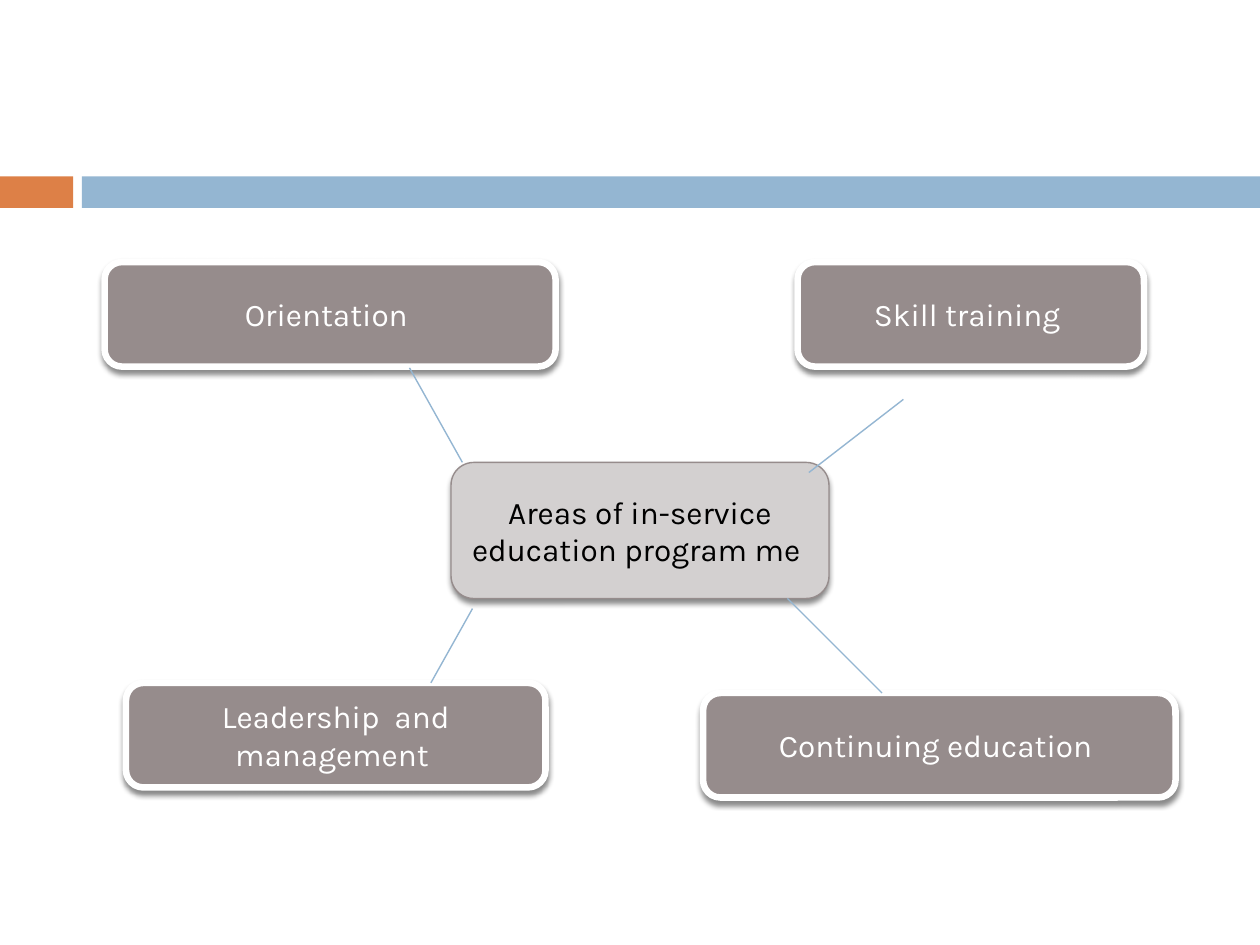
from lxml import etree
from pptx import Presentation
from pptx.dml.color import RGBColor
from pptx.enum.shapes import MSO_CONNECTOR, MSO_SHAPE
from pptx.enum.text import MSO_ANCHOR, PP_ALIGN
from pptx.oxml.ns import qn
from pptx.util import Inches, Pt

RECTANGLE = MSO_SHAPE.RECTANGLE
ROUNDED = MSO_SHAPE.ROUNDED_RECTANGLE
STRAIGHT = MSO_CONNECTOR.STRAIGHT
MIDDLE = MSO_ANCHOR.MIDDLE
CENTER = PP_ALIGN.CENTER

FONT = "Karla"
WHITE, BLACK = "FFFFFF", "000000"
ORANGE, BLUE = "DD8047", "94B6D2"
GRAY, LIGHT_GRAY = "968C8C", "D3D0D0"
THIN, THICK = 0.79, 3.75
AREA_HEIGHT = 0.83

AREAS = [
    ("Skill training ", 6.33, 2.08, 2.75),
    ("Orientation ", 0.83, 2.08, 3.58),
    ("Leadership  and management ", 1, 5.42, 3.33),
    ("Continuing education ", 5.58, 5.5, 3.75),
]
LINKS = [
    (6.42, 3.75, 7.17, 3.17),
    (3.67, 3.67, 3.25, 2.92),
    (3.42, 5.42, 3.75, 4.83),
    (6.25, 4.75, 7, 5.5),
]


def color(value):
    """Return the colour for a hex string."""
    return RGBColor.from_string(value)


def add_filled_shape(slide, kind, box, fill):
    """Add a flat shape with a solid fill and no outline."""
    shape = slide.shapes.add_shape(kind, *map(Inches, box))
    shape.shadow.inherit = False
    shape.fill.solid()
    shape.fill.fore_color.rgb = color(fill)
    shape.line.fill.background()
    return shape


def add_shadow(shape):
    """Give a shape a soft shadow that falls straight down."""
    effects = shape._element.spPr.find(qn("a:effectLst"))
    shadow = etree.SubElement(
        effects, qn("a:outerShdw"), blurRad=str(Pt(3)), dist=str(Pt(2.4)),
        dir="5400000", algn="ctr", rotWithShape="0")
    tint = etree.SubElement(shadow, qn("a:srgbClr"), val=BLACK)
    etree.SubElement(tint, qn("a:alpha"), val="45000")


def add_box(slide, text, box, fill, outline, width, text_color):
    """Add a rounded box with a shadow and a centred label."""
    shape = add_filled_shape(slide, ROUNDED, box, fill)
    shape.line.color.rgb = color(outline)
    shape.line.width = Pt(width)
    add_shadow(shape)
    frame = shape.text_frame
    frame.word_wrap = True
    frame.vertical_anchor = MIDDLE
    paragraph = frame.paragraphs[0]
    paragraph.alignment = CENTER
    run = paragraph.add_run()
    run.text = text
    run.font.name = FONT
    run.font.size = Pt(18)
    run.font.color.rgb = color(text_color)


def add_link(slide, ends):
    """Add a thin straight connector without a shadow."""
    connector = slide.shapes.add_connector(STRAIGHT, *map(Inches, ends))
    connector.line.color.rgb = color(BLUE)
    connector.line.width = Pt(THIN)
    etree.SubElement(connector._element.spPr, qn("a:effectLst"))


def main():
    """Build the slide and save it."""
    presentation = Presentation()
    presentation.slide_width = Inches(10)
    presentation.slide_height = Inches(7.5)
    slide = presentation.slides.add_slide(presentation.slide_layouts[6])
    add_filled_shape(slide, RECTANGLE, (0, 1.4, 0.58, 0.25), ORANGE)
    add_filled_shape(slide, RECTANGLE, (0.65, 1.4, 9.35, 0.25), BLUE)
    add_box(slide, "Areas of in-service education program me ",
            (3.58, 3.67, 3, 1.08), LIGHT_GRAY, GRAY, THIN, BLACK)
    for text, left, top, width in AREAS:
        add_box(slide, text, (left, top, width, AREA_HEIGHT),
                GRAY, WHITE, THICK, WHITE)
    for ends in LINKS:
        add_link(slide, ends)
    presentation.save("out.pptx")


if __name__ == "__main__":
    main()
